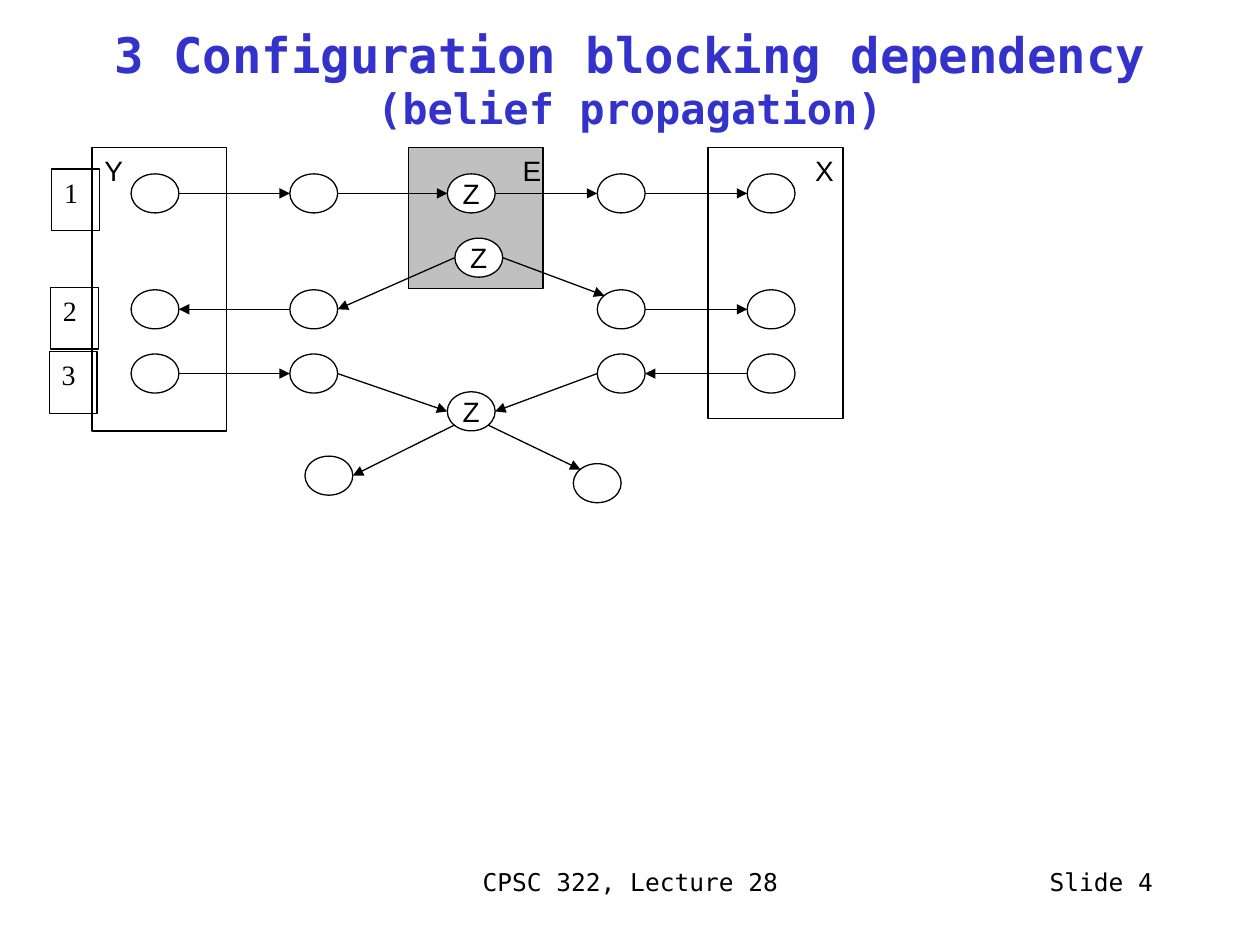
from dataclasses import dataclass

import pptx
import pptx.dml.color
import pptx.enum.shapes
import pptx.enum.text
import pptx.oxml.ns
import pptx.util
from lxml import etree
from pptx.util import Inches

SHAPE = pptx.enum.shapes.MSO_SHAPE
ALIGN = pptx.enum.text.PP_ALIGN
ANCHOR = pptx.enum.text.MSO_ANCHOR


@dataclass(frozen=True)
class Theme:
    black: str = "000000"
    white: str = "FFFFFF"
    grey: str = "C0C0C0"
    blue: str = "3333CC"
    mono: str = "DejaVu Sans Mono"
    sans: str = "Arial"
    serif: str = "Times New Roman"
    title: int = 28
    subtitle: int = 24
    label: int = 16
    footer: int = 14
    line: float = 0.75


THEME = Theme()
NODE_W, NODE_H = 0.38, 0.31
COLUMNS = {"Y": 1.04, "L": 2.3, "R": 4.74, "X": 5.93}
ROWS = {1: 1.38, 2: 2.3, 3: 2.81}
# Points on a node's outline, as fractions of its width and height
SITES = {"left": (0, 0.5), "right": (1, 0.5), "top left": (0.15, 0.15),
         "bottom left": (0.15, 0.85), "bottom right": (0.85, 0.85)}
LINKS = [
    ("Y1", "right", "L1", "left"),
    ("L1", "right", "Z1", "left"),
    ("Z1", "right", "R1", "left"),
    ("R1", "right", "X1", "left"),
    ("L2", "left", "Y2", "right"),
    ("Z2", "left", "L2", "right"),
    ("Z2", "right", "R2", "top left"),
    ("R2", "right", "X2", "left"),
    ("Y3", "right", "L3", "left"),
    ("L3", "right", "Z3", "left"),
    ("R3", "left", "Z3", "right"),
    ("X3", "left", "R3", "right"),
    ("Z3", "bottom left", "Child L", "right"),
    ("Z3", "bottom right", "Child R", "top left"),
]


def rgb(color):
    return pptx.dml.color.RGBColor.from_string(color)


def set_font(font, name, size, color=THEME.black, bold=False):
    font.name, font.size, font.bold = name, pptx.util.Pt(size), bold
    font.color.rgb = rgb(color)


def write(shape, text, name, size, align=ALIGN.LEFT, anchor=ANCHOR.TOP,
          wrap=False):
    tf = shape.text_frame
    tf.word_wrap, tf.vertical_anchor = wrap, anchor
    p = tf.paragraphs[0]
    p.text, p.alignment = text, align
    set_font(p.font, name, size)


def add_text(s, box, text, name, size, **options):
    tb = s.shapes.add_textbox(*map(Inches, box))
    write(tb, text, name, size, **options)


def add_outline(s, kind, box, fill=None):
    sp = s.shapes.add_shape(kind, *map(Inches, box))
    sp.shadow.inherit = False
    if fill:
        sp.fill.solid()
        sp.fill.fore_color.rgb = rgb(fill)
    else:
        sp.fill.background()
    sp.line.color.rgb = rgb(THEME.black)
    sp.line.width = pptx.util.Pt(THEME.line)
    return sp


def add_node(s, left, top, text="", fill=None):
    sp = add_outline(s, SHAPE.OVAL, (left, top, NODE_W, NODE_H), fill)
    if text:
        write(sp, text, THEME.sans, THEME.label, ALIGN.CENTER, ANCHOR.MIDDLE)
    return left, top


def site_point(node, site):
    fx, fy = SITES[site]
    return Inches(node[0] + fx * NODE_W), Inches(node[1] + fy * NODE_H)


def add_arrow(s, start, end):
    line = s.shapes.add_connector(
        pptx.enum.shapes.MSO_CONNECTOR.STRAIGHT, *start, *end)
    line.line.color.rgb = rgb(THEME.black)
    line.line.width = pptx.util.Pt(THEME.line)
    qn = pptx.oxml.ns.qn
    etree.SubElement(line.line._get_or_add_ln(), qn("a:tailEnd"),
                     type="triangle")
    etree.SubElement(line._element.spPr, qn("a:effectLst"))


def add_title(s):
    title = s.shapes.title
    title.left, title.top = Inches(0), Inches(0)
    title.width, title.height = Inches(10), Inches(1.25)
    tf = title.text_frame
    tf.word_wrap, tf.vertical_anchor = True, ANCHOR.MIDDLE
    tf.auto_size = pptx.enum.text.MSO_AUTO_SIZE.NONE
    p = tf.paragraphs[0]
    p.alignment = ALIGN.CENTER
    for text, size in (("3 Configuration blocking dependency ", THEME.title),
                       ("(belief propagation)", THEME.subtitle)):
        r = p.add_run()
        r.text = text
        set_font(r.font, THEME.mono, size, THEME.blue, bold=True)


def add_sets(s):
    """Draw the frames of the variable sets Y, E and X with their letters."""
    for letter, left, height, fill, letter_left in (
            ("Y", 0.73, 2.25, None, 0.73),
            ("E", 3.24, 1.12, THEME.grey, 4.05),
            ("X", 5.62, 2.15, None, 6.37)):
        add_outline(s, SHAPE.RECTANGLE, (left, 1.17, 1.07, height), fill)
        add_text(s, (letter_left, 1.17, 0.42, 0.49), letter,
                 THEME.sans, THEME.label)


def add_network(s):
    nodes = {f"{column}{row}": add_node(s, left, top)
             for column, left in COLUMNS.items() for row, top in ROWS.items()}
    nodes["Z1"] = add_node(s, 3.55, ROWS[1], "Z", THEME.white)
    nodes["Z2"] = add_node(s, 3.61, 1.89, "Z", THEME.white)
    nodes["Z3"] = add_node(s, 3.55, 3.11, "Z")
    nodes["Child L"] = add_node(s, 2.42, 3.62)
    nodes["Child R"] = add_node(s, 4.55, 3.68)
    for source, source_site, target, target_site in LINKS:
        add_arrow(s, site_point(nodes[source], source_site),
                  site_point(nodes[target], target_site))


def add_row_numbers(s):
    for number, left, top in (("1", 0.41, 1.34), ("2", 0.4, 2.28),
                              ("3", 0.39, 2.79)):
        sp = add_outline(s, SHAPE.RECTANGLE, (left, top, 0.38, 0.49))
        write(sp, number, THEME.serif, THEME.label)


def main():
    prs = pptx.Presentation()
    prs.slide_width, prs.slide_height = Inches(10), Inches(7.5)
    s = prs.slides.add_slide(prs.slide_layouts[5])
    add_title(s)
    add_sets(s)
    add_network(s)
    add_row_numbers(s)
    add_text(s, (3.42, 6.83, 3.17, 0.5), "CPSC 322, Lecture 28", THEME.mono,
             THEME.footer, align=ALIGN.CENTER, wrap=True)
    add_text(s, (7.17, 6.83, 2.08, 0.5), "Slide 4", THEME.mono,
             THEME.footer, align=ALIGN.RIGHT, wrap=True)
    prs.save("out.pptx")


if __name__ == "__main__":
    main()
